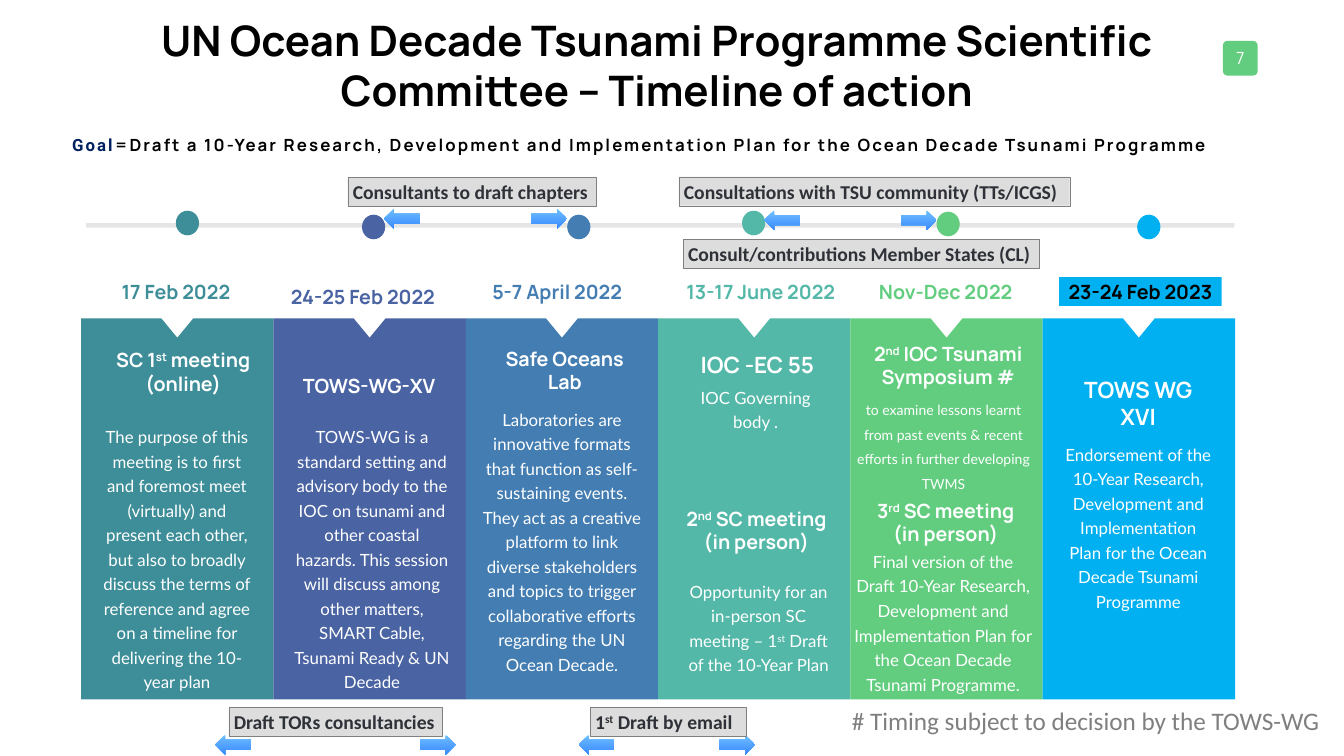
from dataclasses import dataclass

from pptx import Presentation
from pptx.dml.color import RGBColor
from pptx.enum.shapes import MSO_SHAPE
from pptx.enum.text import MSO_ANCHOR, MSO_AUTO_SIZE, PP_ALIGN
from pptx.util import Cm, Pt

RECTANGLE = MSO_SHAPE.RECTANGLE
ROUNDED = MSO_SHAPE.ROUNDED_RECTANGLE
OVAL = MSO_SHAPE.OVAL
ARROW = MSO_SHAPE.RIGHT_ARROW
TOP, MIDDLE, BOTTOM = MSO_ANCHOR.TOP, MSO_ANCHOR.MIDDLE, MSO_ANCHOR.BOTTOM
LEFT, CENTER = PP_ALIGN.LEFT, PP_ALIGN.CENTER
NO_AUTOFIT = MSO_AUTO_SIZE.NONE


@dataclass(frozen=True)
class Theme:
    black: str = "000000"
    white: str = "FFFFFF"
    navy: str = "002060"
    bar: str = "E5E5E5"
    label_fill: str = "DDDDDD"
    label_text: str = "2E3137"
    gray: str = "7F7F7F"
    arrow_light: str = "6FBFFF"
    arrow_dark: str = "3C8BFF"
    teal: str = "3E8E99"
    indigo: str = "4A63A2"
    blue: str = "437DB2"
    mint: str = "54B8A8"
    green: str = "62CD7F"
    sky: str = "00B0F0"
    display: str = "Manrope"
    body: str = "Lato"
    label: str = "Calibri"
    goal: str = "Roboto"
    title_size: int = 60
    note_size: int = 36
    large_size: int = 32
    heading_size: int = 28
    body_size: int = 24
    small_size: int = 20
    body_leading: int = 35


THEME = Theme()
COLUMN_LEFT, COLUMN_TOP = 4.09, 16.05
COLUMN_WIDTH, COLUMN_HEIGHT = 9.69, 19.2
NOTCH_HALF, NOTCH_DEPTH = 0.8, 0.97

MEETINGS = [
    ("17 Feb 2022", (5.84, 13.97, 6.05), (8.86, 10.62), THEME.teal),
    ("24-25 Feb 2022", (14.22, 14.22, 8.13), (18.24, 10.82), THEME.indigo),
    ("5-7 April 2022", (24.28, 13.97, 7.59), (28.58, 10.82), THEME.blue),
    ("13-17 June 2022", (34.19, 13.97, 8.28), (37.39, 10.62), THEME.mint),
    ("Nov-Dec 2022", (43.84, 13.97, 7.62), (47.19, 10.67), THEME.green),
    ("23-24 Feb 2023", (53.37, 13.97, 8.18), (57.3, 10.82), THEME.sky),
]
HEADINGS = [
    ("SC 1^st^ meeting\n(online)", (5.13, 17.4, 8.2, 2.64), THEME.heading_size),
    ("TOWS-WG-XV", (14.91, 17.53, 7.37, 2.64), THEME.heading_size),
    ("Safe Oceans\nLab", (24.71, 17.32, 7.49, 2.64), THEME.heading_size),
    ("IOC -EC 55", (34.67, 17.53, 6.99, 1.63), THEME.large_size),
    ("2^nd^ SC meeting\n(in person)", (34.01, 25.4, 8.2, 2.64), THEME.heading_size),
    ("2^nd^ IOC Tsunami Symposium #", (43.23, 17.07, 9.09, 2.64), THEME.heading_size),
    ("3^rd^ SC meeting (in person)", (43.46, 24.99, 8.38, 2.64), THEME.heading_size),
    ("TOWS WG XVI", (53.87, 19.96, 6.96, 1.83), THEME.large_size),
]
DESCRIPTIONS = [
    ("The purpose of this meeting is to first and foremost meet (virtually) and present each "
     "other, but also to broadly discuss the terms of reference and agree on a timeline for "
     "delivering the 10-year plan", (4.9, 21.18, 8.03, 13.84), THEME.body_size),
    ("TOWS-WG is a standard setting and advisory body to the IOC on tsunami and other coastal "
     "hazards. This session will discuss among other matters, SMART Cable, Tsunami Ready & UN "
     "Decade", (14.58, 21.18, 8.33, 13.84), THEME.body_size),
    ("Laboratories are innovative formats that function as self-sustaining events. They act as "
     "a creative platform to link diverse stakeholders and topics to trigger collaborative "
     "efforts regarding the UN Ocean Decade.", (24.05, 20.29, 8.53, 13.84), THEME.body_size),
    ("IOC Governing body .", (34.06, 19.18, 8.03, 2.62), THEME.body_size),
    ("Opportunity for an in-person SC meeting – 1^st^ Draft of the 10-Year Plan",
     (34.21, 28.96, 8.03, 5.11), THEME.body_size),
    ("to examine lessons learnt from past events & recent efforts in further developing TWMS",
     (42.72, 19.74, 9.65, 5.08), THEME.small_size),
    ("Final version of the Draft 10-Year Research, Development and Implementation Plan for the "
     "Ocean Decade Tsunami Programme.", (42.67, 27.46, 9.7, 7.62), THEME.body_size),
    ("Endorsement of the 10-Year Research, Development and Implementation Plan for the Ocean "
     "Decade Tsunami Programme", (53.34, 22.05, 8.03, 8.86), THEME.body_size),
]
TASKS = [
    ("Consultants to draft chapters", (17.53, 8.94, 12.52, 1.45)),
    ("Consultations with TSU community (TTs/ICGS)", (34.21, 8.92, 19.69, 1.45)),
    ("Consult/contributions Member States (CL)", (34.42, 12.07, 17.96, 1.45)),
    ("Draft TORs consultancies", (11.53, 35.66, 10.77, 1.45)),
    ("1^st^ Draft by email", (29.74, 35.66, 7.85, 1.45)),
]
TASK_SPANS = [(19.35, 26.77, 10.52), (38.51, 45.39, 10.6),
              (10.85, 21.16, 37.03), (29.16, 36.25, 37.03)]


def rgb(color):
    return RGBColor.from_string(color)


def lengths(box):
    return [Cm(value) for value in box]


def style_run(run, font, size, color, bold=False):
    run.font.name = font
    run.font.size = Pt(size)
    run.font.bold = bold
    run.font.color.rgb = rgb(color)


def write(holder, text, font, size, color, bold=False, align=CENTER, anchor=TOP, wrap=True):
    frame = holder.text_frame
    frame.word_wrap = wrap
    frame.auto_size = NO_AUTOFIT
    frame.vertical_anchor = anchor
    for index, line in enumerate(text.split("\n")):
        paragraph = frame.add_paragraph() if index else frame.paragraphs[0]
        paragraph.alignment = align
        for part, words in enumerate(line.split("^")):
            run = paragraph.add_run()
            run.text = words
            style_run(run, font, size, color, bold)
            if part % 2:
                run.font._element.set("baseline", "30000")
    return frame


def paint(shape, color):
    shape.shadow.inherit = False
    shape.fill.solid()
    shape.fill.fore_color.rgb = rgb(color)
    shape.line.fill.background()
    return shape


def add_block(slide, kind, box, color):
    return paint(slide.shapes.add_shape(kind, *lengths(box)), color)


def add_words(slide, text, box, *style, **layout):
    return write(slide.shapes.add_textbox(*lengths(box)), text, *style, **layout)


def add_title(slide):
    title = slide.shapes.title
    title.left, title.top, title.width, title.height = lengths((2.01, 0.58, 62.15, 5.38))
    write(title, "UN Ocean Decade Tsunami Programme Scientific Committee – Timeline of action",
          THEME.display, THEME.title_size, THEME.black, True)


def add_page_number(slide):
    badge = add_block(slide, ROUNDED, (61.62, 2.06, 1.75, 1.75), THEME.green)
    badge.adjustments[0] = 0.13
    write(badge, "7", THEME.display, THEME.body_size, THEME.white, anchor=MIDDLE, wrap=False)


def add_goal(slide):
    frame = add_words(slide, "Goal", (2.01, 6.68, 60.4, 1.27), THEME.goal,
                      THEME.body_size, THEME.navy, True, wrap=False)
    aim = frame.paragraphs[0].add_run()
    aim.text = ("=Draft a 10-Year Research, Development and Implementation Plan "
                "for the Ocean Decade Tsunami Programme")
    style_run(aim, THEME.display, THEME.body_size, THEME.black, True)
    for run in frame.paragraphs[0].runs:
        run.font._element.set("spc", "300")


def add_column(slide, index, color):
    left = COLUMN_LEFT + index * COLUMN_WIDTH
    right, middle = left + COLUMN_WIDTH, left + COLUMN_WIDTH / 2
    bottom = COLUMN_TOP + COLUMN_HEIGHT
    outline = [(middle - NOTCH_HALF, COLUMN_TOP), (middle, COLUMN_TOP + NOTCH_DEPTH),
               (middle + NOTCH_HALF, COLUMN_TOP), (right, COLUMN_TOP),
               (right, bottom), (left, bottom)]
    builder = slide.shapes.build_freeform(Cm(left), Cm(COLUMN_TOP))
    builder.add_line_segments([lengths(point) for point in outline])
    paint(builder.convert_to_shape(), color)


def add_meeting(slide, index, date, date_box, dot, color):
    add_column(slide, index, color)
    add_block(slide, OVAL, (*dot, 1.17, 1.24), color)
    box = (*date_box, 1.45)
    highlighted = index == len(MEETINGS) - 1
    if highlighted:
        holder = add_block(slide, RECTANGLE, box, color)
    else:
        holder = slide.shapes.add_textbox(*lengths(box))
    write(holder, date, THEME.display, THEME.heading_size,
          THEME.black if highlighted else color, True, anchor=MIDDLE, wrap=False)


def add_description(slide, text, box, size):
    frame = add_words(slide, text, box, THEME.body, size, THEME.white)
    frame.paragraphs[0].line_spacing = Pt(THEME.body_leading)
    frame.paragraphs[0].space_before = Pt(size * 0.2)


def add_arrow(slide, left, top, flipped):
    arrow = add_block(slide, ARROW, (left, top, 1.8, 1), THEME.arrow_light)
    arrow.fill.gradient()
    arrow.fill.gradient_angle = 270
    stops = zip(arrow.fill.gradient_stops, (0, 0.98), (THEME.arrow_light, THEME.arrow_dark))
    for stop, position, color in stops:
        stop.position = position
        stop.color.rgb = rgb(color)
    if flipped:
        arrow._element.spPr.get_or_add_xfrm().set("flipH", "1")


def add_task(slide, text, box):
    task = add_block(slide, RECTANGLE, box, THEME.label_fill)
    task.line.color.rgb = rgb(THEME.gray)
    task.line.width = Pt(0.5)
    write(task, text, THEME.label, THEME.heading_size, THEME.label_text, True, align=LEFT)


def main():
    deck = Presentation()
    deck.slide_width, deck.slide_height = Cm(67.72), Cm(38.1)
    slide = deck.slides.add_slide(deck.slide_layouts[5])
    add_title(slide)
    add_page_number(slide)
    add_goal(slide)
    add_block(slide, RECTANGLE, (4.34, 11.25, 57.86, 0.22), THEME.bar)
    for index, meeting in enumerate(MEETINGS):
        add_meeting(slide, index, *meeting)
    for text, box, size in HEADINGS:
        add_words(slide, text, box, THEME.display, size, THEME.white, True, anchor=BOTTOM)
    for description in DESCRIPTIONS:
        add_description(slide, *description)
    for start, end, top in TASK_SPANS:
        add_arrow(slide, start, top, True)
        add_arrow(slide, end, top, False)
    for task in TASKS:
        add_task(slide, *task)
    add_words(slide, "# Timing subject to decision by the TOWS-WG", (42.67, 35.41, 24.36, 1.8),
              THEME.label, THEME.note_size, THEME.gray, align=LEFT)
    deck.save("out.pptx")


if __name__ == "__main__":
    main()
